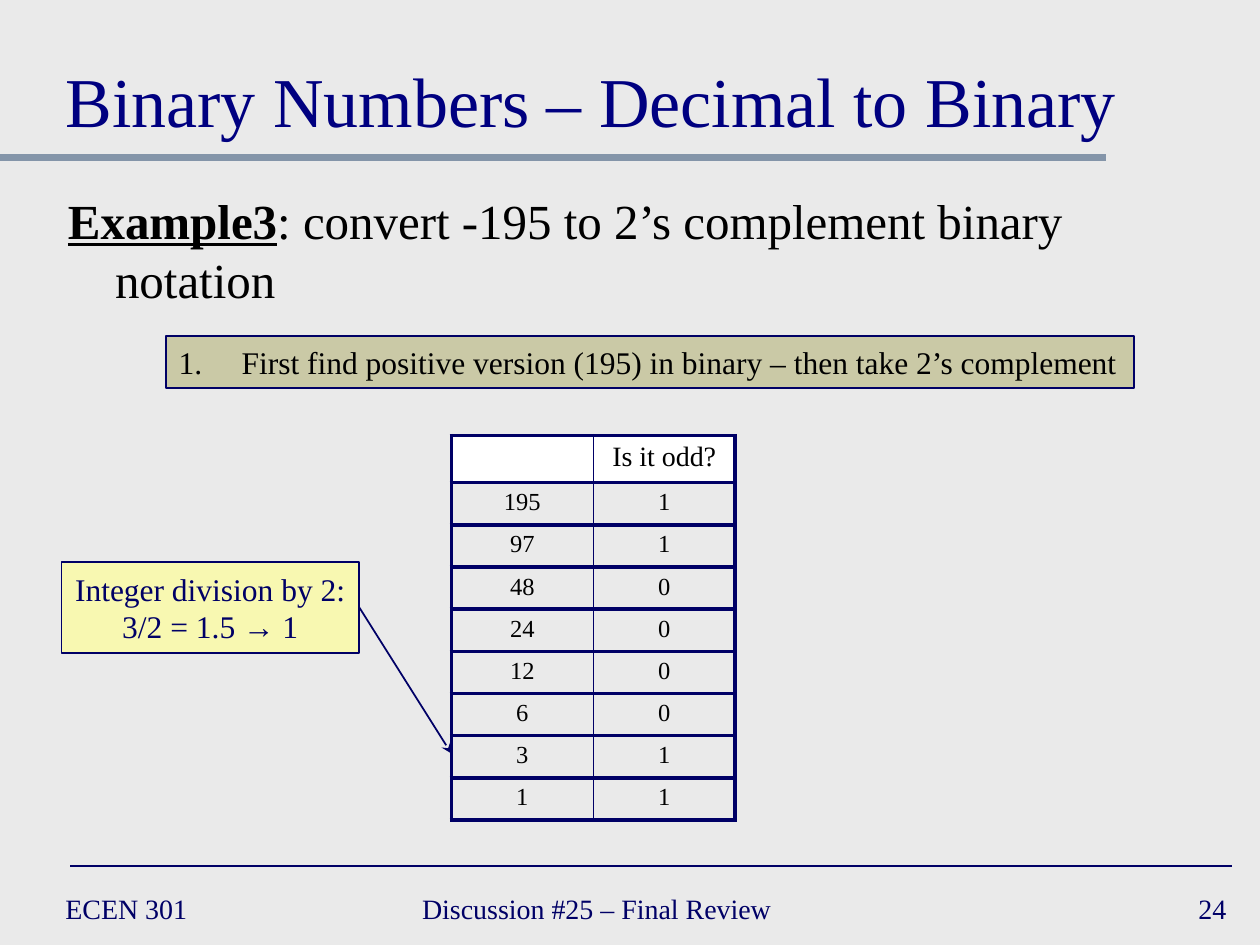
from lxml import etree
from pptx import Presentation
from pptx import util as u
from pptx.dml.color import RGBColor
from pptx.enum import shapes, text
from pptx.oxml.ns import qn

BACKGROUND = RGBColor(0xEA, 0xEA, 0xEA)
NAVY = RGBColor(0x00, 0x00, 0x66)
TITLE_BLUE = RGBColor(0x00, 0x00, 0x80)
SLATE = RGBColor(0x84, 0x95, 0xA9)
OLIVE = RGBColor(0xAC, 0xA9, 0x64)
YELLOW = RGBColor(0xFF, 0xFF, 0x99)
BLACK = RGBColor(0x00, 0x00, 0x00)
WHITE = RGBColor(0xFF, 0xFF, 0xFF)
ALIGN = text.PP_ALIGN
ANCHOR = text.MSO_ANCHOR


def write(frame, content, size=16, color=NAVY, align=ALIGN.LEFT, font="Times New Roman",
          lead="", hanging=0, numbered=False):
    for index, line in enumerate(content.split("\n")):
        paragraph = frame.paragraphs[0] if index == 0 else frame.add_paragraph()
        paragraph.alignment = align
        if hanging:
            properties = paragraph._p.get_or_add_pPr()
            properties.set("marL", str(u.Cm(hanging)))
            properties.set("indent", str(-u.Cm(hanging)))
            if numbered:
                etree.SubElement(properties, qn("a:buAutoNum"), type="arabicPeriod")
        paragraph.font.size = u.Pt(size)
        for words, strong in ((lead, True), (line, False)):
            if words:
                run = paragraph.add_run()
                run.text = words
                run.font.name, run.font.size = font, u.Pt(size)
                run.font.color.rgb = color
                run.font.bold = run.font.underline = strong


class SlideBuilder:
    """Draws styled elements, placed in centimetres, on the current slide."""

    def __init__(self, slide, line_color=NAVY):
        self.slide = slide
        self.line_color = line_color
        slide.background.fill.solid()
        slide.background.fill.fore_color.rgb = BACKGROUND

    def label(self, box, content, anchor=ANCHOR.MIDDLE, **style):
        shape = self.slide.shapes.add_textbox(*map(u.Cm, box))
        shape.text_frame.word_wrap = True
        shape.text_frame.vertical_anchor = anchor
        write(shape.text_frame, content, **style)

    def panel(self, box, content, fill, opacity, **style):
        shape = self.slide.shapes.add_shape(shapes.MSO_SHAPE.RECTANGLE, *map(u.Cm, box))
        shape.shadow.inherit = False
        shape.fill.solid()
        shape.fill.fore_color.rgb = fill
        color = shape._element.spPr.find(qn("a:solidFill")).find(qn("a:srgbClr"))
        etree.SubElement(color, qn("a:alpha"), val=str(opacity * 1000))
        shape.line.color.rgb = self.line_color
        shape.line.width = u.Pt(1)
        shape.text_frame.word_wrap = False
        shape.text_frame.vertical_anchor = ANCHOR.MIDDLE
        write(shape.text_frame, content, **style)

    def line(self, start, end, color=None, width=1, arrow=False):
        connector = self.slide.shapes.add_connector(
            shapes.MSO_CONNECTOR.STRAIGHT, *map(u.Cm, start + end))
        connector.line.color.rgb = color or self.line_color
        connector.line.width = u.Pt(width)
        if arrow:
            etree.SubElement(connector.line._get_or_add_ln(), qn("a:tailEnd"), type="stealth")
        etree.SubElement(connector._element.spPr, qn("a:effectLst"))

    def border(self, cell, side, width):
        properties = cell._tc.get_or_add_tcPr()
        edge = etree.SubElement(properties, qn(f"a:ln{side}"), w=str(u.Pt(width)))
        fill = etree.SubElement(edge, qn("a:solidFill"))
        etree.SubElement(fill, qn("a:srgbClr"), val=str(self.line_color))

    def table(self, left, top, rows, column_width, header_height, row_height):
        columns = len(rows[0])
        height = header_height + row_height * (len(rows) - 1)
        box = (left, top, column_width * columns, height)
        table = self.slide.shapes.add_table(len(rows), columns, *map(u.Cm, box)).table
        table.first_row = table.horz_banding = False
        for column in table.columns:
            column.width = u.Cm(column_width)
        for r, values in enumerate(rows):
            table.rows[r].height = u.Cm(row_height if r else header_height)
            for c, value in enumerate(values):
                cell = table.cell(r, c)
                self.border(cell, "L", 1 if c else 2.25)
                self.border(cell, "R", 1 if c < columns - 1 else 2.25)
                self.border(cell, "T", 2.25)
                self.border(cell, "B", 2.25)
                if r:
                    cell.fill.background()
                else:
                    cell.fill.solid()
                    cell.fill.fore_color.rgb = WHITE
                write(cell.text_frame, value, size=14 if r else 16, color=BLACK,
                      align=ALIGN.CENTER)


def halving_rows(number):
    rows = [("", "Is it odd?")]
    while number:
        rows.append((str(number), str(number % 2)))
        number //= 2
    return rows


def main():
    presentation = Presentation()
    presentation.slide_width, presentation.slide_height = u.Cm(25.4), u.Cm(19.05)
    builder = SlideBuilder(presentation.slides.add_slide(presentation.slide_layouts[6]))

    builder.line((0, 3.18), (22.3, 3.18), color=SLATE, width=4)
    builder.line((1.42, 17.46), (24.84, 17.46))
    for left, width, content, align in (
            (1.07, 5.5, "ECEN 301", ALIGN.LEFT),
            (8.26, 9.73, "Discussion #25 – Final Review", ALIGN.LEFT),
            (19.69, 5.28, "24", ALIGN.RIGHT)):
        builder.label((left, 17.78, width, 1.07), content, align=align)

    builder.label((1.07, 0.43, 23.28, 2.54), "Binary Numbers – Decimal to Binary",
                  anchor=ANCHOR.BOTTOM, size=40, color=TITLE_BLUE)
    builder.label((1.12, 3.71, 23.22, 2.44), ": convert -195 to 2’s complement binary notation",
                  anchor=ANCHOR.TOP, size=28, color=BLACK, lead="Example3", hanging=0.95)
    builder.panel((3.35, 6.78, 19.51, 1.04),
                  "First find positive version (195) in binary – then take 2’s complement",
                  OLIVE, 50, size=18, color=BLACK, hanging=1.27, numbered=True)
    builder.table(9.1, 8.78, halving_rows(195), column_width=2.86, header_height=0.95,
                  row_height=0.85)
    builder.panel((1.24, 11.33, 6, 1.83), "Integer division by 2:\n3/2 = 1.5 → 1",
                  YELLOW, 70, size=18, align=ALIGN.CENTER)
    builder.line((7.24, 12.24), (9.1, 15.19), arrow=True)
    presentation.save("out.pptx")


if __name__ == "__main__":
    main()
